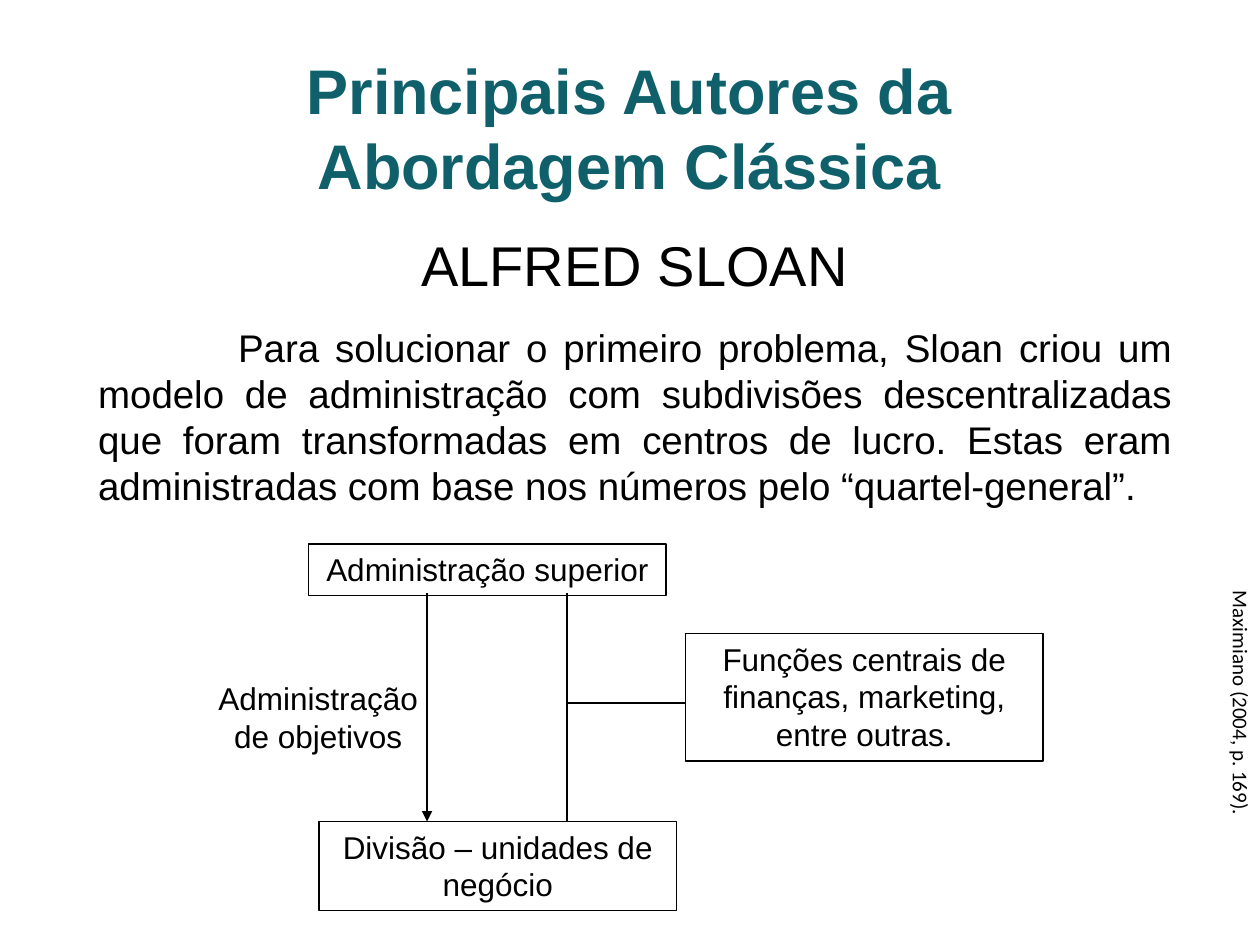
from pptx import Presentation
from pptx.dml.color import RGBColor
from pptx.enum.shapes import MSO_CONNECTOR, MSO_SHAPE
from pptx.enum.text import MSO_ANCHOR, PP_ALIGN
from pptx.oxml.ns import qn
from pptx.util import Cm, Pt
from lxml.etree import SubElement

COLORS = {"title": "0F606B", "ink": "000000", "paper": "FFFFFF"}
FORMATS = {
    "title": {"name": "Arial", "size": Pt(36), "bold": True},
    "author": {"name": "Arial", "size": Pt(32)},
    "body": {"name": "Arial", "size": Pt(22)},
    "diagram": {"name": "Arial", "size": Pt(18)},
    "citation": {"name": "Calibri", "size": Pt(12)},
}
LINE_WIDTH = Pt(0.75)


def color(name):
    return RGBColor.from_string(COLORS[name])


def write(shape, text, style, ink="ink", align=PP_ALIGN.CENTER, wrap=True):
    frame = shape.text_frame
    frame.word_wrap = wrap
    frame.vertical_anchor = MSO_ANCHOR.TOP
    para = frame.paragraphs[0]
    para.alignment = align
    span = para.add_run()
    span.text = text
    for key, value in FORMATS[style].items():
        setattr(span.font, key, value)
    span.font.color.rgb = color(ink)
    return para


def add_text(page, box, text, style, **options):
    shape = page.shapes.add_textbox(*map(Cm, box))
    return shape, write(shape, text, style, **options)


def add_node(page, box, text):
    shape = page.shapes.add_shape(MSO_SHAPE.RECTANGLE, *map(Cm, box))
    shape.shadow.inherit = False
    shape.fill.background()
    shape.line.color.rgb = color("ink")
    shape.line.width = LINE_WIDTH
    write(shape, text, "diagram")


def add_line(page, start, end, arrow=False):
    line = page.shapes.add_connector(MSO_CONNECTOR.STRAIGHT, *map(Cm, start + end))
    line.line.color.rgb = color("ink")
    line.line.width = LINE_WIDTH
    if arrow:
        SubElement(line.line._get_or_add_ln(), qn("a:tailEnd"), type="triangle")
    SubElement(line._element.spPr, qn("a:effectLst"))


def add_heading(page, box):
    left, top, width, height = box
    add_text(page, (left, top, width, 3.3),
             "Principais Autores da Abordagem Clássica", "title", ink="title")
    add_text(page, (left + 0.2, top + height - 1.63, width - 0.18, 1.63),
             "ALFRED SLOAN", "author")


def add_body(page, box):
    _, para = add_text(
        page, box,
        "Para solucionar o primeiro problema, Sloan criou um modelo de administração "
        "com subdivisões descentralizadas que foram transformadas em centros de lucro. "
        "Estas eram administradas com base nos números pelo “quartel-general”.",
        "body", align=PP_ALIGN.JUSTIFY)
    para._p.get_or_add_pPr().set("indent", str(Cm(2.82)))


def add_diagram(page, box):
    left, top, width, height = box
    node_width = 7.21
    top_height, staff_height, unit_height = 1.04, 2.57, 1.8
    staff_left = left + width - node_width
    unit_top = top + height - unit_height
    add_node(page, (left + 2.41, top, node_width, top_height), "Administração superior")
    add_node(page, (staff_left, top + 1.8, node_width, staff_height),
             "Funções centrais de finanças, marketing, entre outras.")
    add_node(page, (left + 2.62, unit_top, node_width, unit_height),
             "Divisão – unidades de negócio")
    add_text(page, (left, top + 2.59, 5.21, 1.78), "Administração de objetivos", "diagram")
    trunk, flow = left + 7.62, left + 4.8
    branch = top + 3.2
    for x, arrow in ((trunk, False), (flow, True)):
        add_line(page, (x, top + 0.99), (x, unit_top), arrow)
    add_line(page, (trunk, branch), (staff_left, branch))


def add_citation(page, box):
    shape, _ = add_text(page, box, "Maximiano (2004, p. 169).", "citation", wrap=False)
    shape.rotation = 90


def main():
    deck = Presentation()
    deck.slide_width, deck.slide_height = Cm(25.4), Cm(19.05)
    page = deck.slides.add_slide(deck.slide_layouts[6])
    page.background.fill.solid()
    page.background.fill.fore_color.rgb = color("paper")
    add_heading(page, (2.69, 0.91, 19.99, 5.24))
    add_body(page, (1.73, 6.4, 22.15, 4.01))
    add_diagram(page, (3.81, 10.97, 17.22, 7.39))
    add_citation(page, (22.48, 13.79, 5.08, 0.76))
    deck.save("out.pptx")


if __name__ == "__main__":
    main()
